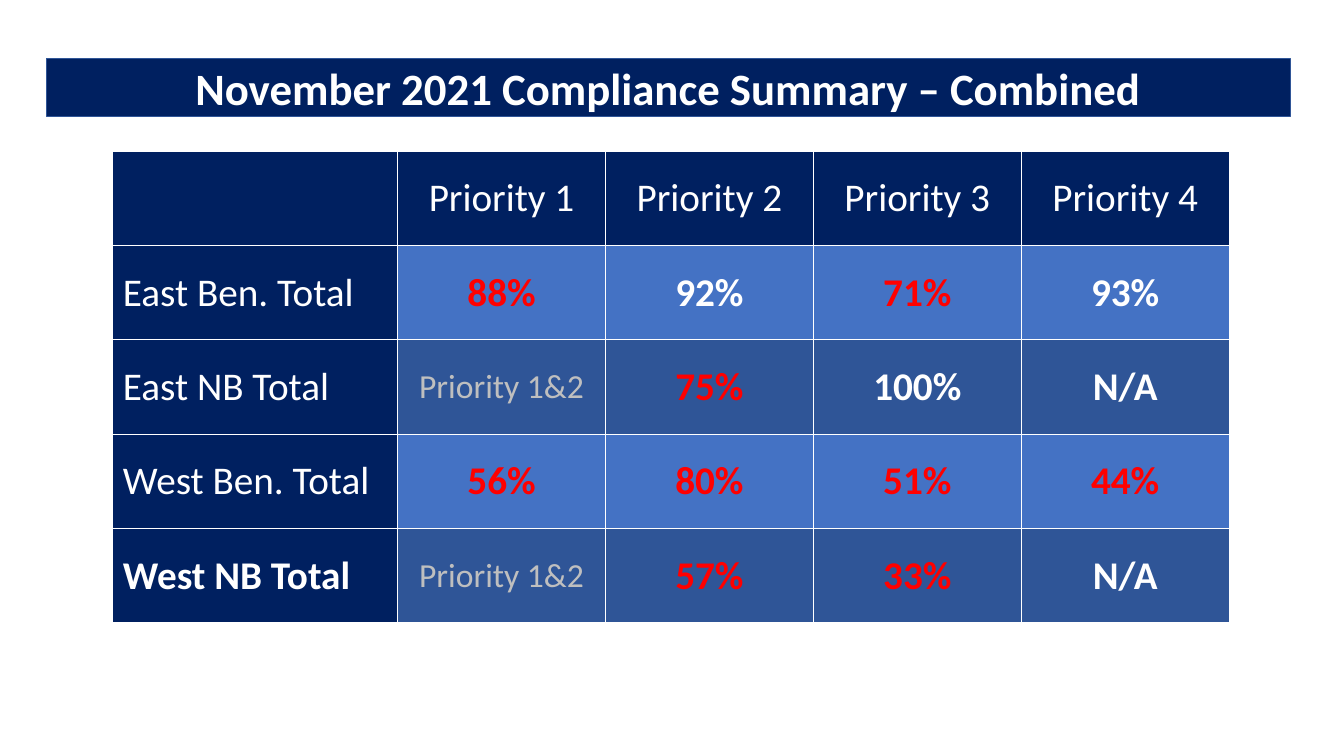
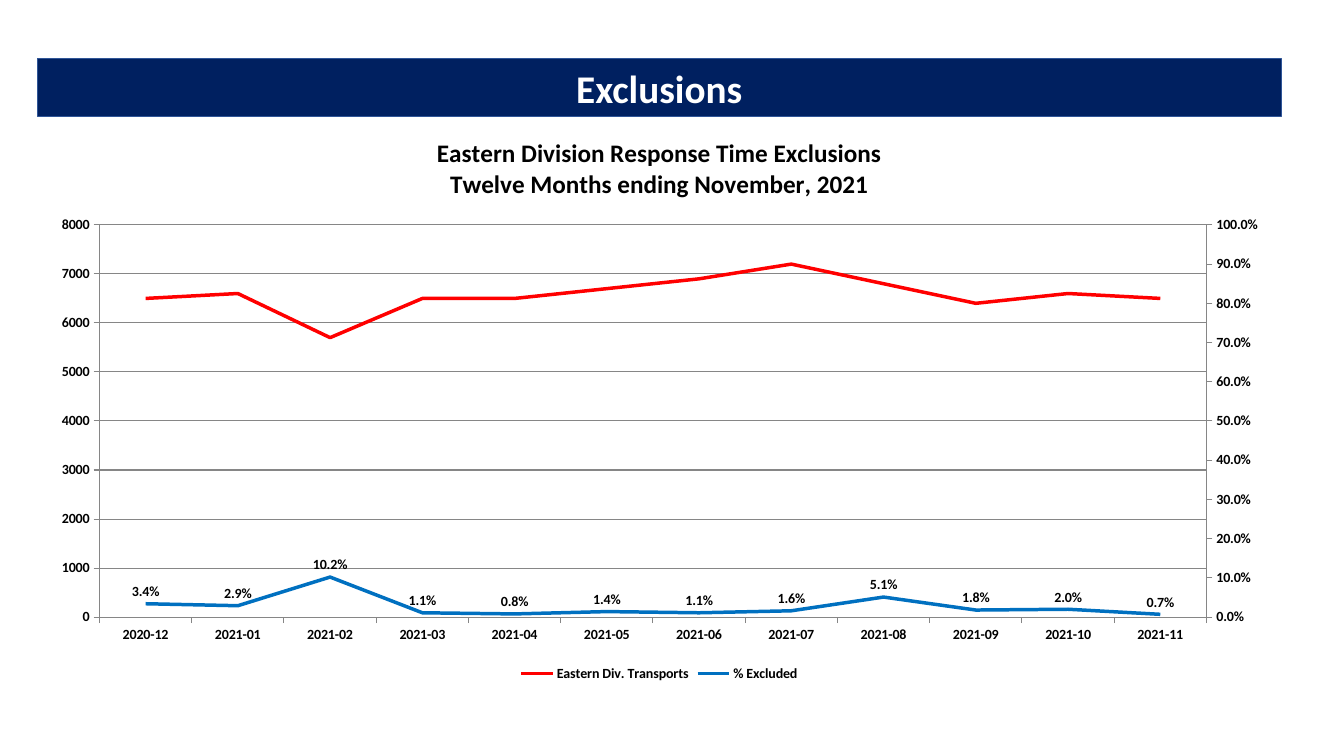
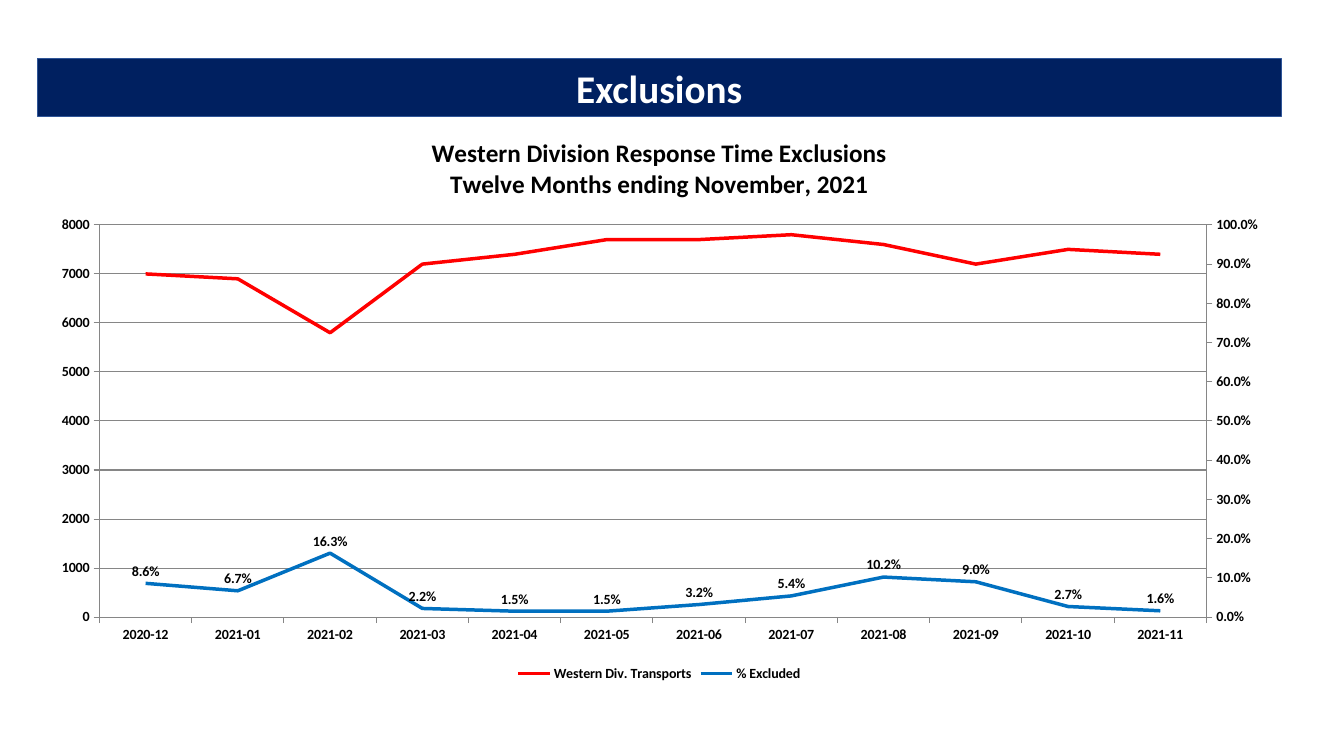
from copy import deepcopy

from lxml.etree import SubElement
from pptx import Presentation
from pptx.chart.axis import CategoryAxis, ValueAxis
from pptx.chart.data import CategoryChartData as ChartData
from pptx.dml.color import RGBColor
from pptx.enum.chart import XL_CHART_TYPE as ChartType
from pptx.enum.chart import XL_LABEL_POSITION as LabelPosition
from pptx.enum.chart import XL_LEGEND_POSITION as LegendPosition
from pptx.enum.chart import XL_TICK_MARK as TickMark
from pptx.enum.shapes import MSO_SHAPE as Shape
from pptx.enum.text import MSO_ANCHOR as Anchor
from pptx.enum.text import PP_ALIGN as Align
from pptx.oxml.ns import qn
from pptx.util import Pt

# Shared style
FONT = "Calibri"
COLORS = {
    "navy": "002060", "dark_blue": "2F5597", "blue": "4472C4",
    "white": "FFFFFF", "black": "000000", "red": "FF0000",
    "muted": "BFBFBF", "line_blue": "0070C0", "grid": "868686",
}
BAND_LEFT, BAND_TOP, BAND_WIDTH, BAND_HEIGHT = 26.64, 41.76, 888.48, 41.4

# Compliance table
TARGET = 90
HEADINGS = ["", "Priority 1", "Priority 2", "Priority 3", "Priority 4"]
COMPLIANCE = [
    ["East Ben. Total", "88%", "92%", "71%", "93%"],
    ["East NB Total", "Priority 1&2", "75%", "100%", "N/A"],
    ["West Ben. Total", "56%", "80%", "51%", "44%"],
    ["West NB Total", "Priority 1&2", "57%", "33%", "N/A"],
]

# Exclusion charts
MONTHS = ["2020-12"] + [f"2021-{month:02}" for month in range(1, 12)]
DIVISIONS = {
    "Eastern": (
        [6500, 6600, 5700, 6500, 6500, 6700, 6900, 7200, 6800, 6400, 6600, 6500],
        [0.034, 0.029, 0.102, 0.011, 0.008, 0.014,
         0.011, 0.016, 0.051, 0.018, 0.02, 0.007],
    ),
    "Western": (
        [7000, 6900, 5800, 7200, 7400, 7700, 7700, 7800, 7600, 7200, 7500, 7400],
        [0.086, 0.067, 0.163, 0.022, 0.015, 0.015,
         0.032, 0.054, 0.102, 0.09, 0.027, 0.016],
    ),
}
PLOT_FRAME = {"x": 0.05, "y": 0.19, "w": 0.89, "h": 0.69}


def rgb(name):
    return RGBColor.from_string(COLORS[name])


def style_font(font, size, color, bold=False):
    font.name, font.size, font.bold = FONT, Pt(size), bold
    font.color.rgb = rgb(color)


def style_line(line, color, width):
    line.color.rgb = rgb(color)
    line.width = Pt(width)


def add_page(deck):
    return deck.slides.add_slide(deck.slide_layouts[6])


def add_title_band(page, text, size=28, left=BAND_LEFT):
    band = page.shapes.add_shape(Shape.RECTANGLE, Pt(left), Pt(BAND_TOP),
                                 Pt(BAND_WIDTH), Pt(BAND_HEIGHT))
    band.shadow.inherit = False
    band.fill.solid()
    band.fill.fore_color.rgb = rgb("navy")
    style_line(band.line, "dark_blue", 0.75)
    frame = band.text_frame
    frame.margin_top = frame.margin_bottom = 0
    frame.word_wrap = True
    frame.vertical_anchor = Anchor.MIDDLE
    para = frame.paragraphs[0]
    para.text = text
    para.alignment = Align.CENTER
    style_font(para.font, size, "white", True)


# Table parts
def set_borders(cell, bottom):
    properties = cell._tc.get_or_add_tcPr()
    for side, width in (("L", 1), ("R", 1), ("T", 1), ("B", bottom)):
        line = SubElement(properties, qn(f"a:ln{side}"), w=str(Pt(width)))
        fill = SubElement(line, qn("a:solidFill"))
        SubElement(fill, qn("a:srgbClr"), val=COLORS["white"])


def cell_font(text, row, column):
    """Return size, colour and weight of a cell's text."""
    if row == 0 or column == 0:
        return 28, "white", row == len(COMPLIANCE)
    if text.startswith("Priority"):
        return 24, "muted", False
    missed = text.endswith("%") and int(text[:-1]) < TARGET
    return 28, "red" if missed else "white", True


def fill_cell(cell, text, row, column):
    set_borders(cell, bottom=1.5 if row == 0 else 1)
    cell.fill.solid()
    heading = row == 0 or column == 0
    fill = "navy" if heading else "blue" if row % 2 else "dark_blue"
    cell.fill.fore_color.rgb = rgb(fill)
    cell.vertical_anchor = Anchor.MIDDLE
    para = cell.text_frame.paragraphs[0]
    para.text = text
    para.alignment = Align.CENTER if column else Align.LEFT
    style_font(para.font, *cell_font(text, row, column))


def add_compliance_table(page):
    rows = [HEADINGS] + COMPLIANCE
    widths = [203.4] + [148.5] * 4
    height = 67.4
    table = page.shapes.add_table(len(rows), len(widths), Pt(80.64), Pt(108),
                                  Pt(sum(widths)), Pt(height * len(rows))).table
    for column, width in zip(table.columns, widths):
        column.width = Pt(width)
    for row, texts in enumerate(rows):
        table.rows[row].height = Pt(height)
        for column, text in enumerate(texts):
            fill_cell(table.cell(row, column), text, row, column)


# Chart parts
def style_axis(axis):
    axis.major_tick_mark = TickMark.OUTSIDE
    axis.minor_tick_mark = TickMark.NONE
    style_line(axis.format.line, "grid", 0.75)
    style_font(axis.tick_labels.font, 10, "black", True)


def scale_axis(axis, top, step, number_format):
    style_axis(axis)
    axis.minimum_scale, axis.maximum_scale, axis.major_unit = 0, top, step
    axis.tick_labels.number_format = number_format
    axis.tick_labels.number_format_is_linked = False


def move_to_right_axis(chart, series):
    """Put a series on a second line plot and return its value axis."""
    left_plot = series._element.getparent()
    right_plot = deepcopy(left_plot)
    for copied in right_plot.findall(qn("c:ser")):
        right_plot.remove(copied)
    right_plot.find(qn("c:varyColors")).addnext(series._element)
    left_plot.addnext(right_plot)

    category, value = chart.category_axis._element, chart.value_axis._element
    right_category, right_value = deepcopy(category), deepcopy(value)
    value.addnext(right_value)
    right_value.addnext(right_category)
    new_ids = {category.find(qn("c:axId")).get("val"): "5001",
               value.find(qn("c:axId")).get("val"): "5002"}
    for part in (right_plot, right_category, right_value):
        for tag in ("c:axId", "c:crossAx"):
            for reference in part.findall(qn(tag)):
                reference.set("val", new_ids[reference.get("val")])

    CategoryAxis(right_category).visible = False
    right_value.find(qn("c:axPos")).set("val", "r")
    right_value.find(qn("c:crosses")).set("val", "max")
    return ValueAxis(right_value)


def set_plot_frame(chart):
    area = chart._chartSpace.chart.plotArea
    for old in area.findall(qn("c:layout")):
        area.remove(old)
    layout = SubElement(area, qn("c:layout"))
    area.insert(0, layout)
    manual = SubElement(layout, qn("c:manualLayout"))
    SubElement(manual, qn("c:layoutTarget"), val="inner")
    for side in "xy":
        SubElement(manual, qn(f"c:{side}Mode"), val="edge")
    for side, share in PLOT_FRAME.items():
        SubElement(manual, qn(f"c:{side}"), val=str(share))


def add_chart_title(chart, lines):
    chart.has_title = True
    chart.chart_title.include_in_layout = False
    frame = chart.chart_title.text_frame
    frame.text = "\n".join(lines)
    for para in frame.paragraphs:
        style_font(para.font, 18, "black", True)


def add_exclusion_chart(page, division, transports, excluded):
    data = ChartData()
    data.categories = MONTHS
    data.add_series(f"{division} Div. Transports", transports, "General")
    data.add_series("% Excluded", excluded, "0.0%")
    chart = page.shapes.add_chart(ChartType.LINE, Pt(BAND_LEFT), Pt(83.52),
                                  Pt(BAND_WIDTH), Pt(406.08), data).chart
    style_font(chart.font, 10, "black", True)
    add_chart_title(chart, [f"{division} Division Response Time Exclusions",
                            "Twelve Months ending November, 2021"])
    chart.has_legend = True
    chart.legend.position = LegendPosition.BOTTOM
    chart.legend.include_in_layout = False
    style_font(chart.legend.font, 10, "black", True)

    plot = chart.plots[0]
    plot.vary_by_categories = False
    for series, color in zip(plot.series, ("red", "line_blue")):
        series.smooth = False
        style_line(series.format.line, color, 2.5)
    share = plot.series[1]
    labels = share.data_labels
    labels.show_value = True
    labels.position = LabelPosition.ABOVE
    labels.number_format, labels.number_format_is_linked = "0.0%", False
    style_font(labels.font, 10, "black", True)

    # With two value axes chart.value_axis is the second, so keep the first
    left_axis = chart.value_axis
    right_axis = move_to_right_axis(chart, share)
    scale_axis(left_axis, 8000, 1000, "General")
    scale_axis(right_axis, 1, 0.1, "0.0%")
    left_axis.has_major_gridlines = True
    right_axis.has_major_gridlines = False
    style_line(left_axis.major_gridlines.format.line, "grid", 0.75)
    style_axis(chart.category_axis)
    set_plot_frame(chart)


def main():
    deck = Presentation()
    deck.slide_width, deck.slide_height = Pt(960), Pt(540)

    # Compliance summary
    page = add_page(deck)
    add_title_band(page, "November 2021 Compliance Summary – Combined",
                   size=32, left=33.12)
    add_compliance_table(page)

    # Exclusions by division
    for division, (transports, excluded) in DIVISIONS.items():
        page = add_page(deck)
        add_title_band(page, "Exclusions")
        add_exclusion_chart(page, division, transports, excluded)

    deck.save("out.pptx")


if __name__ == "__main__":
    main()
